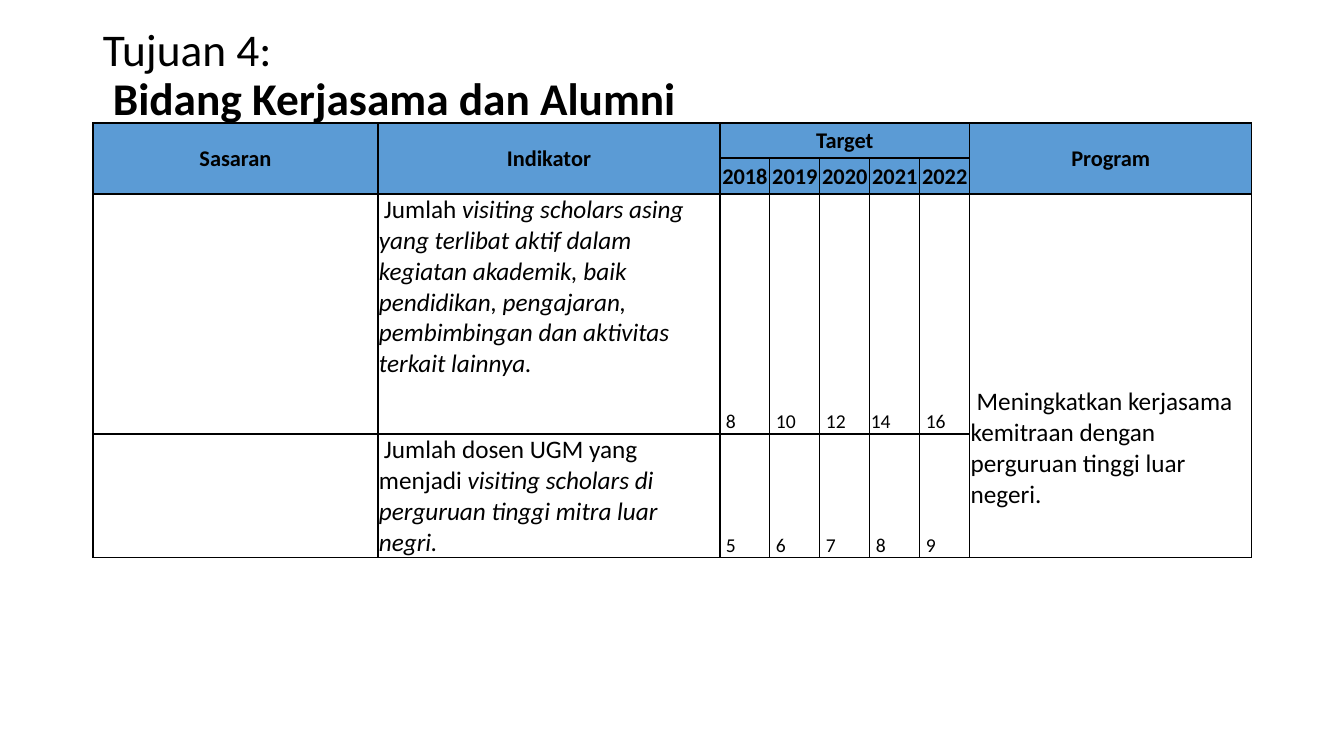
from pptx import Presentation
from pptx.dml.color import RGBColor
from pptx.enum.text import MSO_ANCHOR, PP_ALIGN
from pptx.oxml.ns import qn
from pptx.util import Pt
from lxml import etree

PX = 914400 / 100.8
TOP, MIDDLE, BOTTOM = MSO_ANCHOR.TOP, MSO_ANCHOR.MIDDLE, MSO_ANCHOR.BOTTOM
LEFT, CENTER = PP_ALIGN.LEFT, PP_ALIGN.CENTER
BLACK, HEADER_BLUE = "000000", "5B9BD5"

YEARS = ["2018", "2019", "2020", "2021", "2022"]
FIRST_YEAR_COL = 2
PROGRAM_COL = FIRST_YEAR_COL + len(YEARS)
COLUMN_WIDTHS = [285, 342] + [50] * len(YEARS) + [282]
ROW_HEIGHTS = [35, 36, 240, 124]
INDICATORS = [
    ([("Jumlah ", False),
      ("visiting scholars asing yang terlibat aktif dalam kegiatan akademik, "
       "baik pendidikan, pengajaran, pembimbingan dan aktivitas terkait lainnya.", True)],
     [8, 10, 12, 14, 16]),
    ([("Jumlah dosen UGM yang menjadi ", False),
      ("visiting scholars di perguruan tinggi mitra luar negri.", True)],
     [5, 6, 7, 8, 9]),
]
PROGRAM = "Meningkatkan kerjasama kemitraan dengan perguruan tinggi luar negeri."


def px(length):
    return round(length * PX)


def rgb(hex_color):
    return RGBColor.from_string(hex_color)


def write(paragraph, text, size=18, bold=False, italic=False, align=LEFT, indent=0):
    """Add one run; indent shifts only the first line of the paragraph."""
    paragraph.alignment = align
    if indent:
        paragraph._p.get_or_add_pPr().set("indent", str(px(indent)))
    run = paragraph.add_run()
    run.text = text
    font = run.font
    font.name, font.size, font.bold, font.italic = "Calibri", Pt(size), bold, italic
    font.color.rgb = rgb(BLACK)


def add_title(slide, left, top, width, height):
    frame = slide.shapes.add_textbox(px(left), px(top), px(width), px(height)).text_frame
    frame.word_wrap = True
    frame.vertical_anchor = MIDDLE
    heading, field = frame.paragraphs[0], frame.add_paragraph()
    write(heading, "Tujuan 4:", size=32.4)
    write(field, "Bidang Kerjasama dan Alumni", size=32.4, bold=True, indent=10)
    for line in (heading, field):
        line.line_spacing = 0.9


def style_cell(cell, fill=None):
    cell.margin_left = cell.margin_right = cell.margin_top = px(1)
    cell.margin_bottom = 0
    properties = cell._tc.get_or_add_tcPr()
    for side in ("a:lnL", "a:lnR", "a:lnT", "a:lnB"):
        line = etree.SubElement(properties, qn(side), w=str(Pt(1)))
        solid = etree.SubElement(line, qn("a:solidFill"))
        etree.SubElement(solid, qn("a:srgbClr"), val=BLACK)
    if fill:
        cell.fill.solid()
        cell.fill.fore_color.rgb = rgb(fill)
    else:
        cell.fill.background()


def fill_cell(cell, runs, anchor, **style):
    cell.vertical_anchor = anchor
    for text, italic in runs:
        write(cell.text_frame.paragraphs[0], text, italic=italic, **style)


def add_header(table):
    labels = [(0, 0, "Sasaran"), (0, 1, "Indikator"), (0, FIRST_YEAR_COL, "Target"),
              (0, PROGRAM_COL, "Program")]
    labels += [(1, FIRST_YEAR_COL + i, year) for i, year in enumerate(YEARS)]
    for col in (0, 1, PROGRAM_COL):
        table.cell(0, col).merge(table.cell(1, col))
    table.cell(0, FIRST_YEAR_COL).merge(table.cell(0, PROGRAM_COL - 1))
    for row, col, label in labels:
        fill_cell(table.cell(row, col), [(label, False)], MIDDLE,
                  size=16, bold=True, align=CENTER)


def add_body(table):
    for row, (indicator, targets) in enumerate(INDICATORS, start=2):
        fill_cell(table.cell(row, 1), indicator, TOP, indent=5)
        for col, target in enumerate(targets, start=FIRST_YEAR_COL):
            indent = 0 if target == 14 else 5
            fill_cell(table.cell(row, col), [(str(target), False)], BOTTOM,
                      size=14, indent=indent)
    program = table.cell(2, PROGRAM_COL)
    program.merge(table.cell(3, PROGRAM_COL))
    fill_cell(program, [(PROGRAM, False)], BOTTOM, indent=6)
    program.margin_bottom = px(48)


def add_target_table(slide, left, top):
    table = slide.shapes.add_table(
        len(ROW_HEIGHTS), len(COLUMN_WIDTHS), px(left), px(top),
        px(sum(COLUMN_WIDTHS)), px(sum(ROW_HEIGHTS))).table
    for column, width in zip(table.columns, COLUMN_WIDTHS):
        column.width = px(width)
    for index, (row, height) in enumerate(zip(table.rows, ROW_HEIGHTS)):
        row.height = px(height)
        for cell in row.cells:
            style_cell(cell, HEADER_BLUE if index < 2 else None)
    add_header(table)
    add_body(table)


def main():
    deck = Presentation()
    deck.slide_width, deck.slide_height = px(1344), px(756)
    slide = deck.slides.add_slide(deck.slide_layouts[6])
    add_title(slide, 93, 40, 1159, 72)
    add_target_table(slide, 93, 123)
    deck.save("out.pptx")


if __name__ == "__main__":
    main()
